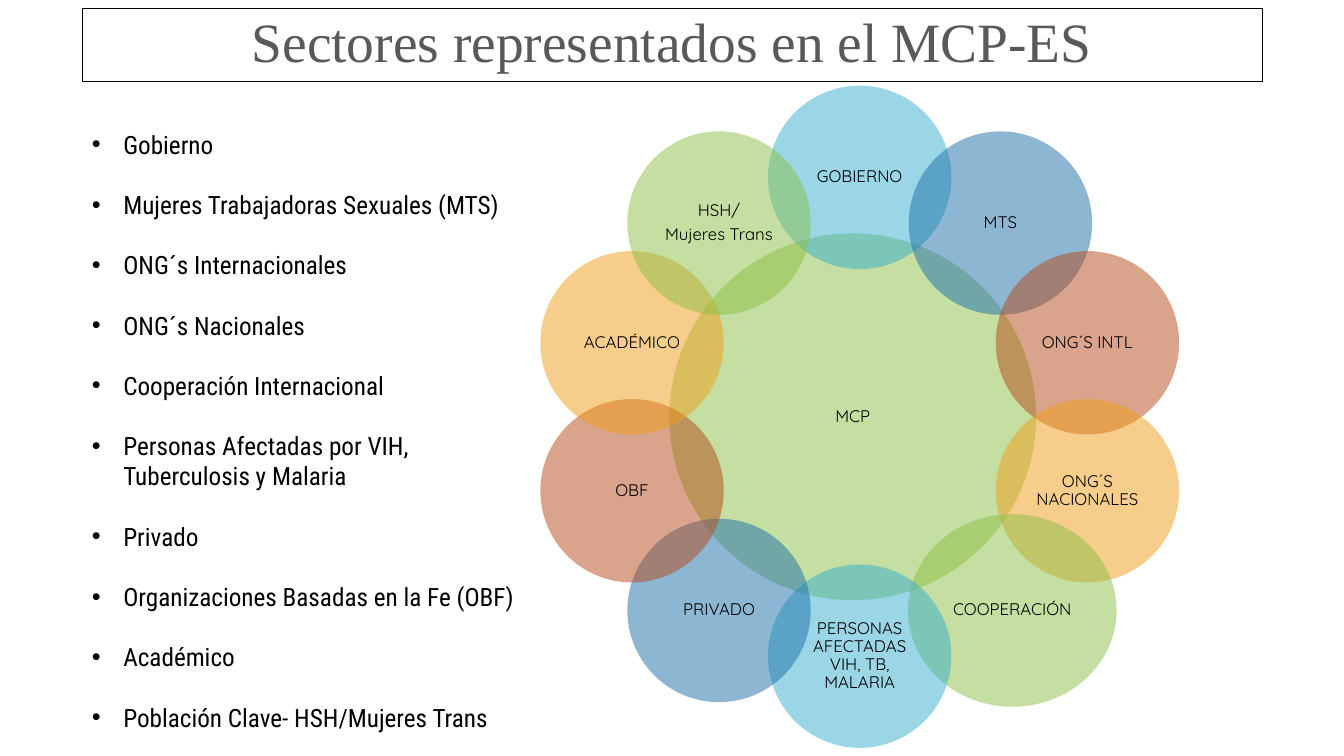
import math

import lxml.etree
import pptx
import pptx.dml.color
import pptx.enum.shapes
import pptx.enum.text
import pptx.oxml.ns
import pptx.util

Pt = pptx.util.Pt
SHAPES = pptx.enum.shapes.MSO_SHAPE
ALIGN = pptx.enum.text.PP_ALIGN
ANCHOR = pptx.enum.text.MSO_ANCHOR

COLORS = {
    "black": "000000",
    "title": "595959",
    "green": "8BC145",
    "cyan": "36AFCE",
    "blue": "1D6FA9",
    "rust": "B74919",
    "amber": "F19D19",
}
TITLE = "Sectores representados en el MCP-ES"
SECTORS = [
    "Gobierno",
    "Mujeres Trabajadoras Sexuales (MTS)",
    "ONG´s Internacionales",
    "ONG´s Nacionales",
    "Cooperación Internacional",
    "Personas Afectadas por VIH, Tuberculosis y Malaria",
    "Privado",
    "Organizaciones Basadas en la Fe (OBF)",
    "Académico",
    "Población Clave- HSH/Mujeres Trans",
]
# Clockwise from the top
PETALS = [
    (["GOBIERNO"], "cyan"),
    (["MTS"], "blue"),
    (["ONG´S INTL"], "rust"),
    (["ONG´S NACIONALES"], "amber"),
    (["COOPERACIÓN"], "green"),
    (["PERSONAS AFECTADAS VIH, TB, MALARIA"], "cyan"),
    (["PRIVADO"], "blue"),
    (["OBF"], "rust"),
    (["ACADÉMICO"], "amber"),
    (["HSH/", "Mujeres Trans"], "green"),
]
PETAL_SIZE = 131
HUB_SIZE = 262
# Width, height and shift to the right of the one larger petal
WIDE_PETALS = {"COOPERACIÓN": (149, 137.5, 8.5)}


def rgb(name):
    return pptx.dml.color.RGBColor.from_string(COLORS[name])


def add_span(para, text, font, size, color="black"):
    span = para.add_run()
    span.text = text
    span.font.name = font
    span.font.size = Pt(size)
    span.font.color.rgb = rgb(color)


def set_margins(frame, margin):
    frame.margin_left = frame.margin_right = Pt(margin)
    frame.margin_top = frame.margin_bottom = Pt(margin)


def next_para(frame, index):
    """Return the paragraph a new frame starts with, then added ones."""
    return frame.add_paragraph() if index else frame.paragraphs[0]


def add_title(page, left, top, width, height):
    box = page.shapes.add_shape(
        SHAPES.RECTANGLE, Pt(left), Pt(top), Pt(width), Pt(height))
    box.shadow.inherit = False
    box.fill.background()
    box.line.color.rgb = rgb("black")
    box.line.width = Pt(0.25)
    box.text_frame.word_wrap = True
    box.text_frame.vertical_anchor = ANCHOR.MIDDLE
    para = box.text_frame.paragraphs[0]
    para.alignment = ALIGN.CENTER
    para.line_spacing = 0.9
    add_span(para, TITLE, "Times New Roman", 39.6, "title")


def add_bullet(para, indent):
    props = para._p.get_or_add_pPr()
    props.set("marL", str(Pt(indent)))
    props.set("indent", str(-Pt(indent)))
    font = lxml.etree.SubElement(props, pptx.oxml.ns.qn("a:buFont"))
    font.set("typeface", "Arial")
    mark = lxml.etree.SubElement(props, pptx.oxml.ns.qn("a:buChar"))
    mark.set("char", "•")


def add_sector_list(page, left, top, width, height):
    box = page.shapes.add_textbox(Pt(left), Pt(top), Pt(width), Pt(height))
    frame = box.text_frame
    frame.word_wrap = True
    frame.margin_right = Pt(14)
    for index, sector in enumerate(SECTORS):
        para = next_para(frame, index)
        para.alignment = ALIGN.LEFT
        para.space_after = Pt(21.5)
        add_bullet(para, 22.5)
        add_span(para, sector, "Roboto Condensed", 18)


def add_circle(page, center_x, center_y, width, height, lines, color):
    """Place a half-transparent labelled ellipse around a center point."""
    circle = page.shapes.add_shape(
        SHAPES.OVAL, Pt(center_x - width / 2), Pt(center_y - height / 2),
        Pt(width), Pt(height))
    circle.shadow.inherit = False
    circle.line.fill.background()
    circle.fill.solid()
    circle.fill.fore_color.rgb = rgb(color)
    tint = circle.fill._xPr.find(".//" + pptx.oxml.ns.qn("a:srgbClr"))
    alpha = lxml.etree.SubElement(tint, pptx.oxml.ns.qn("a:alpha"))
    alpha.set("val", "50000")
    frame = circle.text_frame
    frame.word_wrap = True
    frame.vertical_anchor = ANCHOR.MIDDLE
    set_margins(frame, 1.5)
    for index, line in enumerate(lines):
        para = next_para(frame, index)
        para.alignment = ALIGN.CENTER
        para.line_spacing = 0.9
        para.space_after = Pt(4.2)
        add_span(para, line, "Quicksand", 12)


def add_flower(page, left, top, width, height):
    """Draw the hub and its ring of petals inside the given box."""
    center_x, center_y = left + width / 2, top + height / 2
    radius = (height - PETAL_SIZE) / 2
    add_circle(page, center_x - 5, center_y, HUB_SIZE, HUB_SIZE,
               ["MCP"], "green")
    for index, (lines, color) in enumerate(PETALS):
        angle = 2 * math.pi * index / len(PETALS)
        petal_width, petal_height, shift = WIDE_PETALS.get(
            lines[0], (PETAL_SIZE, PETAL_SIZE, 0))
        add_circle(page, center_x + radius * math.sin(angle) + shift,
                   center_y - radius * math.cos(angle),
                   petal_width, petal_height, lines, color)


def main():
    deck = pptx.Presentation()
    deck.slide_width, deck.slide_height = Pt(960), Pt(540)
    page = deck.slides.add_slide(deck.slide_layouts[6])
    add_title(page, 58.5, 6, 843, 52)
    add_flower(page, 386, 61.2, 456.2, 473)
    add_sector_list(page, 58.5, 88.5, 332.5, 422)
    deck.save("out.pptx")


if __name__ == "__main__":
    main()
